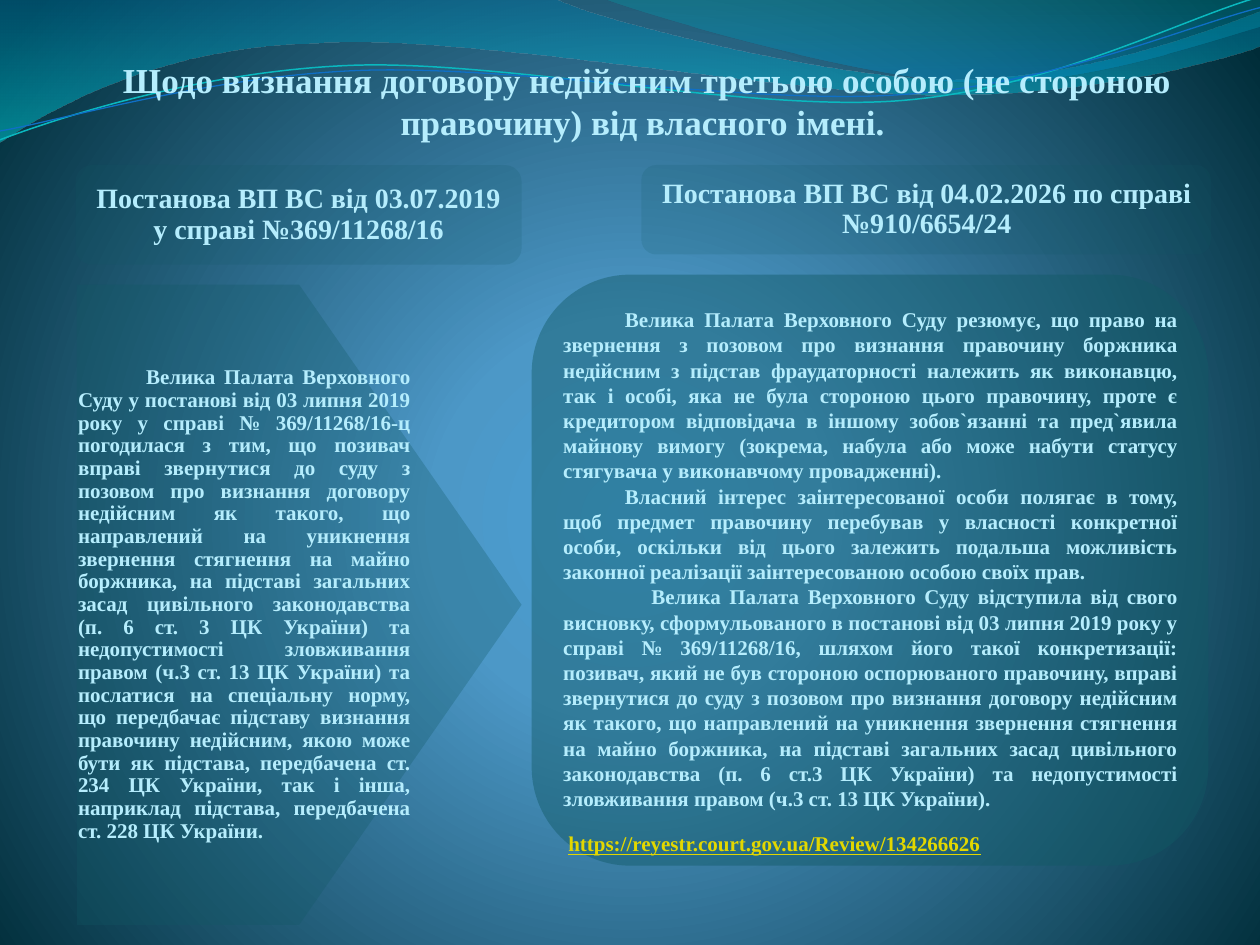
from dataclasses import dataclass
from math import cos, radians, sin

from lxml import etree
from pptx import Presentation
from pptx import util as u
from pptx.dml.color import RGBColor
from pptx.enum import shapes, text
from pptx.oxml import parse_xml
from pptx.oxml.ns import nsdecls, qn

COLORS = {"panel": "115964", "text": "B5EDFD", "link": "E2D700",
          "cyan": "0AB8BF", "blue": "0F6FC6"}
FONT = "Times New Roman"
LINEAR = '<a:lin ang="5400000" scaled="0"/>'
RADIAL = ('<a:path path="circle"><a:fillToRect l="10000" t="110000" '
          'r="10000" b="100000"/></a:path>')
Kind = shapes.MSO_SHAPE
Align = text.PP_ALIGN


@dataclass
class Wave:
    """Steps run on from start: a pair is straight, six numbers a curve."""
    box: tuple
    start: tuple
    steps: list
    stops: tuple = ()
    line: str = ""
    width: float = 0
    turn: float = 0


@dataclass
class Para:
    words: str
    size: float
    align: Align = Align.JUSTIFY
    indent: float = 0
    spacing: float = 1.0
    before: float = 0
    color: str = "text"
    underline: bool = False


@dataclass
class Panel:
    kind: Kind
    box: tuple
    alpha: int
    area: tuple
    inset: float
    paras: list


WAVES = [
    Wave((-0.01, -0.01, 10.02, 1.14), (0, 0),
         [(4.4, -0.01), (4.76, 0.17, 6.64, 0.63, 7.58, 0.63),
          (8.53, 0.63, 9.58, 0.26, 10, 0.09), (10.01, 0.36),
          (9.83, 0.44, 8.7, 0.76, 7.46, 0.75),
          (6.22, 0.75, 3.82, 0.28, 2.57, 0.34),
          (1.29, 0.36, 0.46, 0.83, -0.01, 1.13), (0, 0)],
         stops=((0, "0074A1", 45), (100, "00C6CF", 55))),
    Wave((4.79, -0.01, 5.21, 0.7), (4.79, -0.01),
         [(5.09, 0.11, 6.82, 0.62, 7.69, 0.65),
          (8.56, 0.69, 9.61, 0.32, 10, 0.21), (10, 0), (4.79, -0.01)],
         stops=((0, "00A1A9", 30), (80, "008BBF", 45))),
    Wave((-0.02, 0.22, 10.02, 0.71), (0, 1.11),
         [(0.48, 0.93, 1.58, 0.57, 2.77, 0.52),
          (3.95, 0.47, 5.93, 0.89, 7.13, 0.8),
          (8.33, 0.71, 9.38, 0.15, 9.98, -0.02)],
         line="cyan", width=0.85, turn=-2.7),
    Wave((-0.02, 0.3, 10.03, 0.58), (0, 1.04),
         [(0.47, 0.96, 1.64, 0.61, 2.83, 0.56),
          (4.03, 0.51, 5.97, 0.84, 7.17, 0.75),
          (8.36, 0.67, 9.41, 0.21, 10, 0.06)],
         line="blue", width=0.75, turn=-2.7),
]

TITLE = Para("Щодо визнання договору недійсним третьою особою (не стороною "
             "правочину) від власного імені. ", 20, Align.CENTER)

PANELS = [
    Panel(Kind.PENTAGON, (0.61, 2.26, 3.53, 5.08), 29,
          (0.61, 2.26, 2.66, 5.08), 0.01, [
        Para("Велика Палата Верховного Суду у постанові від 03 липня 2019 року "
             "у справі № 369/11268/16-ц погодилася з тим, що позивач вправі "
             "звернутися до суду з позовом про визнання договору недійсним як "
             "такого, що направлений на уникнення звернення стягнення на майно "
             "боржника, на підставі загальних засад цивільного законодавства "
             "(п. 6 ст. 3 ЦК України) та недопустимості зловживання правом "
             "(ч.3 ст. 13 ЦК України) та послатися на спеціальну норму, що "
             "передбачає підставу визнання правочину недійсним, якою може бути "
             "як підстава, передбачена ст. 234 ЦК України, так і інша, "
             "наприклад підстава, передбачена ст. 228 ЦК України.",
             12, indent=0.54, spacing=0.9)]),
    Panel(Kind.FLOWCHART_ALTERNATE_PROCESS, (4.22, 2.18, 5.37, 4.69), 44,
          (4.45, 2.59, 4.92, 4.05), 0.02, [
        Para("Велика Палата Верховного Суду резюмує, що право на звернення з "
             "позовом про визнання правочину боржника недійсним з підстав "
             "фраудаторності належить як виконавцю, так і особі, яка не була "
             "стороною цього правочину, проте є кредитором відповідача в іншому "
             "зобов`язанні та пред`явила майнову вимогу (зокрема, набула або "
             "може набути статусу стягувача у виконавчому провадженні).",
             12, indent=0.49),
        Para("Власний інтерес заінтересованої особи полягає в тому, щоб предмет "
             "правочину перебував у власності конкретної особи, оскільки від "
             "цього залежить подальша можливість законної реалізації "
             "заінтересованою особою своїх прав.", 12, indent=0.49),
        Para("Велика Палата Верховного Суду відступила від свого висновку, "
             "сформульованого в постанові від 03 липня 2019 року у справі "
             "№ 369/11268/16, шляхом його такої конкретизації: позивач, який не "
             "був стороною оспорюваного правочину, вправі звернутися до суду з "
             "позовом про визнання договору недійсним як такого, що направлений "
             "на уникнення звернення стягнення на майно боржника, на підставі "
             "загальних засад цивільного законодавства (п. 6 ст.3 ЦК України) "
             "та недопустимості зловживання правом (ч.3 ст. 13 ЦК України).",
             12, indent=0.7),
        Para("https://reyestr.court.gov.ua/Review/134266626", 12, indent=0.04,
             spacing=0.9, before=13, color="link", underline=True)]),
    Panel(Kind.ROUNDED_RECTANGLE, (0.6, 1.31, 3.54, 0.79), 17,
          (0.64, 1.35, 3.46, 0.71), 0.07, [
        Para("Постанова ВП ВС від 03.07.2019 у справі №369/11268/16",
             16, Align.CENTER, spacing=0.9)]),
    Panel(Kind.ROUNDED_RECTANGLE, (5.09, 1.31, 4.52, 0.71), 16,
          (5.13, 1.34, 4.45, 0.64), 0.07, [
        Para("Постанова ВП ВС від 04.02.2026 по справі №910/6654/24",
             16, Align.CENTER, spacing=0.9)]),
]


def rgb(name: str) -> RGBColor:
    return RGBColor.from_string(COLORS[name])


def shade(holder, stops: tuple, course: str) -> None:
    """Swap the empty fill of holder for a gradient."""
    marks = "".join(
        f'<a:gs pos="{pos * 1000}"><a:srgbClr val="{color}">'
        f'<a:alpha val="{alpha * 1000}"/></a:srgbClr></a:gs>'
        for pos, color, alpha in stops)
    grad = parse_xml(f'<a:gradFill {nsdecls("a")} rotWithShape="1">'
                     f'<a:gsLst>{marks}</a:gsLst>{course}</a:gradFill>')
    holder.replace(holder.find(qn("a:noFill")), grad)


def place(wave: Wave, x: float, y: float) -> tuple:
    """Turn a slide point back about the box centre; measure from its corner."""
    left, top, wide, high = wave.box
    dx, dy = x - left - wide / 2, y - top - high / 2
    c, s = cos(radians(-wave.turn)), sin(radians(-wave.turn))
    return (u.Inches(dx * c - dy * s + wide / 2),
            u.Inches(dx * s + dy * c + high / 2))


def bend(wave: Wave, outline) -> None:
    """Make each six-number step of the outline a cubic curve."""
    outline.set("w", str(u.Inches(wave.box[2])))
    outline.set("h", str(u.Inches(wave.box[3])))
    for step, line in zip(wave.steps, outline.findall(qn("a:lnTo"))):
        if len(step) == 6:
            curve = etree.Element(qn("a:cubicBezTo"))
            for x, y in zip(step[::2], step[1::2]):
                px, py = place(wave, x, y)
                etree.SubElement(curve, qn("a:pt"), x=str(px), y=str(py))
            outline.replace(line, curve)


def draw_wave(slide, wave: Wave) -> None:
    ends = [place(wave, *step[-2:]) for step in wave.steps]
    first = place(wave, *wave.start)
    pen = slide.shapes.build_freeform(*first)
    pen.add_line_segments(ends, close=bool(wave.stops))
    shape = pen.convert_to_shape()
    outline = shape.element.find(f".//{qn('a:path')}")
    for mark, (x, y) in zip(outline.iter(qn("a:pt")), [first, *ends]):
        mark.set("x", str(x))
        mark.set("y", str(y))
    bend(wave, outline)
    shape.left, shape.top, shape.width, shape.height = map(u.Inches, wave.box)
    shape.rotation = wave.turn
    shape.shadow.inherit = False
    shape.fill.background()
    if wave.stops:
        shape.line.fill.background()
        shade(shape.element.spPr, wave.stops, LINEAR)
    else:
        shape.line.color.rgb = rgb(wave.line)
        shape.line.width = u.Pt(wave.width)


def write(frame, paras: list, inset: float, anchor) -> None:
    look = {"word_wrap": True, "vertical_anchor": anchor,
            "auto_size": text.MSO_AUTO_SIZE.NONE}
    look |= {f"margin_{side}": u.Inches(inset)
             for side in ("left", "right", "top", "bottom")}
    for key, value in look.items():
        setattr(frame, key, value)
    for i, item in enumerate(paras):
        para = frame.add_paragraph() if i else frame.paragraphs[0]
        para.alignment, para.line_spacing = item.align, item.spacing
        para.space_before = u.Pt(item.before)
        para._p.get_or_add_pPr().set("indent", str(u.Inches(item.indent)))
        run = para.add_run()
        run.text = item.words
        style = {"name": FONT, "size": u.Pt(item.size), "bold": True,
                 "underline": item.underline}
        for key, value in style.items():
            setattr(run.font, key, value)
        run.font.color.rgb = rgb(item.color)


def draw_panel(slide, panel: Panel) -> None:
    shape = slide.shapes.add_shape(panel.kind, *map(u.Inches, panel.box))
    shape.shadow.inherit = False
    shape.line.fill.background()
    shape.fill.solid()
    shape.fill.fore_color.rgb = rgb("panel")
    tint = shape.element.spPr.find(qn("a:solidFill"))[0]
    etree.SubElement(tint, qn("a:alpha"), val=str(panel.alpha * 1000))
    area = slide.shapes.add_textbox(*map(u.Inches, panel.area))
    write(area.text_frame, panel.paras, panel.inset, text.MSO_ANCHOR.MIDDLE)


def main() -> None:
    deck = Presentation()
    deck.slide_width, deck.slide_height = u.Inches(10), u.Inches(7.5)
    slide = deck.slides.add_slide(deck.slide_layouts[5])
    slide.background.fill.background()
    shade(slide.element.find(f".//{qn('p:bgPr')}"),
          ((0, "4AA0D6", 100), (25, "4C98C7", 100), (100, "002C38", 100)),
          RADIAL)
    for wave in WAVES:
        draw_wave(slide, wave)
    title = slide.shapes.title
    title.element.getparent().append(title.element)
    title.left, title.top, title.width, title.height = map(
        u.Inches, (0.67, 0.36, 8.93, 0.77))
    write(title.text_frame, [TITLE], 0, text.MSO_ANCHOR.BOTTOM)
    for panel in PANELS:
        draw_panel(slide, panel)
    deck.save("out.pptx")


if __name__ == "__main__":
    main()
